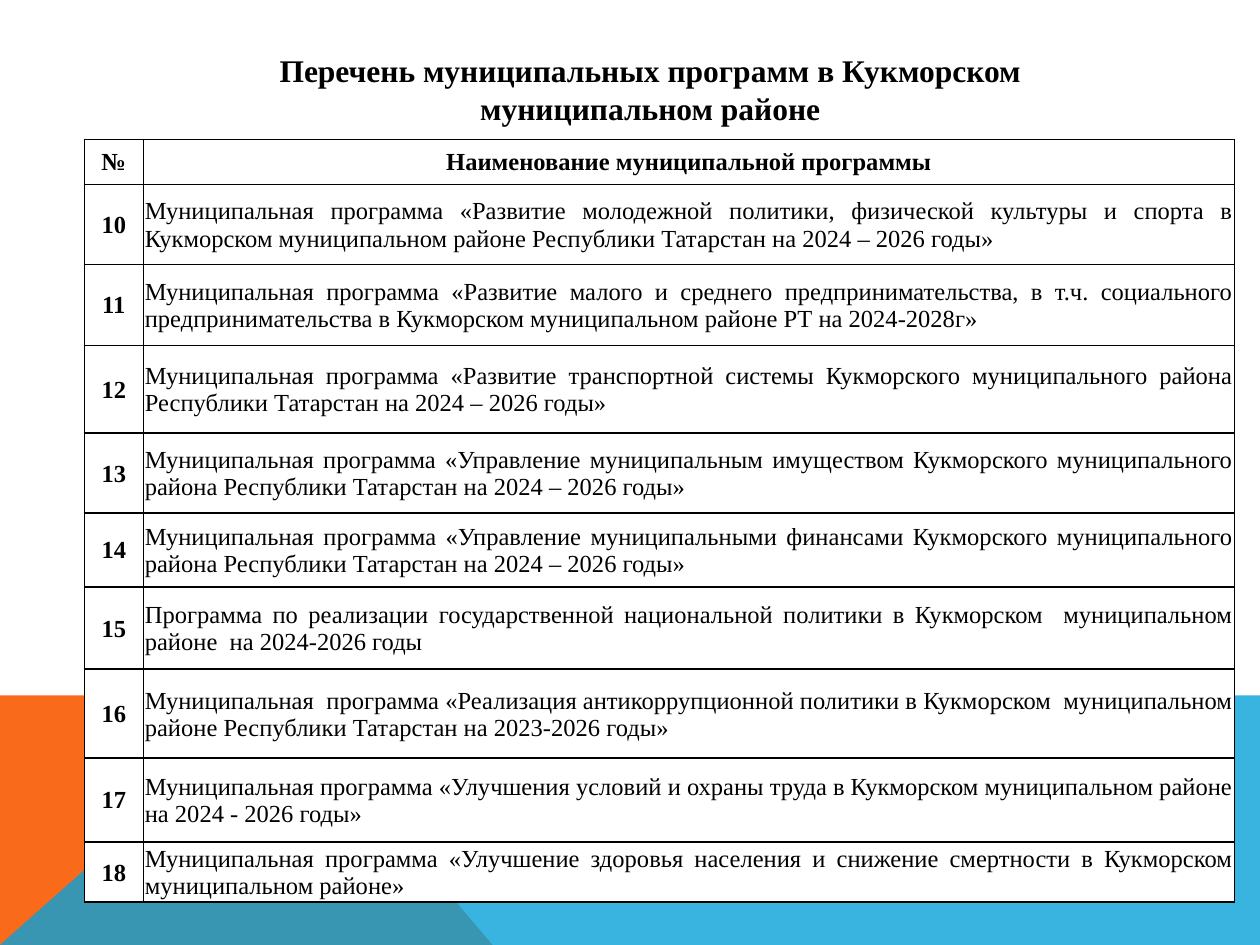
"""Build a slide listing the municipal programmes of the Kukmor district."""

from typing import NamedTuple

from lxml.etree import SubElement
from pptx import Presentation
from pptx.dml.color import RGBColor
from pptx.enum.text import MSO_ANCHOR, MSO_AUTO_SIZE, PP_ALIGN
from pptx.oxml.ns import qn
from pptx.util import Cm, Pt

FONT = "Times New Roman"
BLACK = "000000"
WHITE = "FFFFFF"
COLUMN_WIDTHS = (1.19, 22)


class Band(NamedTuple):
    points: list[tuple[float, float]]
    color: str
    opacity: int


class Row(NamedTuple):
    number: str
    name: str
    height: float


BANDS = [
    Band([(0, 19.05), (0, 14.02), (5.66, 14.02), (9.93, 19.05)], "F96A1B", 100),
    Band([(0, 19.05), (5.66, 14.02), (25.4, 14.02), (25.4, 19.05)], "08A1D9", 80),
]

ROWS = [
    Row("№", "Наименование муниципальной программы", 0.91),
    Row("10", "Муниципальная программа «Развитие молодежной политики, физической культуры и спорта "
        "в Кукморском муниципальном районе Республики Татарстан на 2024 – 2026 годы»", 1.61),
    Row("11", "Муниципальная программа «Развитие малого и среднего предпринимательства, в т.ч. социального "
        "предпринимательства в Кукморском муниципальном районе РТ на 2024-2028г»", 1.63),
    Row("12", "Муниципальная программа «Развитие транспортной системы Кукморского муниципального района "
        "Республики Татарстан на 2024 – 2026 годы»", 1.77),
    Row("13", "Муниципальная программа «Управление муниципальным имуществом Кукморского муниципального "
        "района Республики Татарстан на 2024 – 2026 годы»", 1.61),
    Row("14", "Муниципальная программа «Управление муниципальными финансами Кукморского муниципального "
        "района Республики Татарстан на 2024 – 2026 годы»", 1.49),
    Row("15", "Программа по реализации государственной национальной политики в Кукморском  муниципальном "
        "районе  на 2024-2026 годы", 1.66),
    Row("16", "Муниципальная  программа «Реализация антикоррупционной политики в Кукморском  муниципальном "
        "районе Республики Татарстан на 2023-2026 годы»", 1.79),
    Row("17", "Муниципальная программа «Улучшения условий и охраны труда в Кукморском муниципальном районе "
        "на 2024 - 2026 годы»", 1.69),
    Row("18", "Муниципальная программа «Улучшение здоровья населения и снижение смертности в Кукморском "
        "муниципальном районе»", 1.21),
]


def paint(fill, color: str) -> None:
    fill.solid()
    fill.fore_color.rgb = RGBColor.from_string(color)


def write(frame, text: str, size: int, bold: bool, align: PP_ALIGN) -> None:
    frame.text = text
    para = frame.paragraphs[0]
    para.alignment = align
    for span in para.runs:
        span.font.name = FONT
        span.font.size = Pt(size)
        span.font.bold = bold
        paint(span.font.fill, BLACK)


def draw_band(page, band: Band) -> None:
    points = [(Cm(x), Cm(y)) for x, y in band.points]
    builder = page.shapes.build_freeform(*points[0])
    builder.add_line_segments(points[1:], close=True)
    shape = builder.convert_to_shape()
    shape.shadow.inherit = False
    shape.line.fill.background()
    paint(shape.fill, band.color)
    if band.opacity < 100:
        color = shape.fill._xPr.find(".//" + qn("a:srgbClr"))
        SubElement(color, qn("a:alpha"), val=str(band.opacity * 1000))


def add_borders(cell) -> None:
    properties = cell._tc.get_or_add_tcPr()
    for side in ("lnL", "lnR", "lnT", "lnB"):
        line = SubElement(properties, qn(f"a:{side}"), w=str(Pt(1)))
        fill = SubElement(line, qn("a:solidFill"))
        SubElement(fill, qn("a:srgbClr"), val=BLACK)


def fill_cell(cell, text: str, bold: bool, align: PP_ALIGN) -> None:
    cell.margin_left = cell.margin_right = cell.margin_top = Cm(0.03)
    cell.margin_bottom = 0
    cell.vertical_anchor = MSO_ANCHOR.MIDDLE
    write(cell.text_frame, text, 14, bold, align)
    add_borders(cell)
    paint(cell.fill, WHITE)


def draw_table(page, rows: list[Row]) -> None:
    height = sum(row.height for row in rows)
    frame = page.shapes.add_table(len(rows), len(COLUMN_WIDTHS), Cm(1.7), Cm(2.81),
                                  Cm(sum(COLUMN_WIDTHS)), Cm(height))
    table = frame.table
    table.horz_banding = False
    for column, width in zip(table.columns, COLUMN_WIDTHS):
        column.width = Cm(width)
    for index, row in enumerate(rows):
        table.rows[index].height = Cm(row.height)
        header = index == 0
        fill_cell(table.cell(index, 0), row.number, True, PP_ALIGN.CENTER)
        fill_cell(table.cell(index, 1), row.name, header,
                  PP_ALIGN.CENTER if header else PP_ALIGN.JUSTIFY)


def place_title(page, text: str) -> None:
    title = page.shapes.title
    title.left, title.top, title.width, title.height = Cm(5.31), Cm(0.91), Cm(15.6), Cm(1.8)
    frame = title.text_frame
    frame.word_wrap = True
    frame.auto_size = MSO_AUTO_SIZE.SHAPE_TO_FIT_TEXT
    frame.vertical_anchor = MSO_ANCHOR.TOP
    write(frame, text, 18, True, PP_ALIGN.CENTER)


def main() -> None:
    deck = Presentation()
    deck.slide_width, deck.slide_height = Cm(25.4), Cm(19.05)
    page = deck.slides.add_slide(deck.slide_layouts[5])
    paint(page.background.fill, WHITE)
    for band in BANDS:
        draw_band(page, band)
    draw_table(page, ROWS)
    place_title(page, "Перечень муниципальных программ в Кукморском муниципальном районе")
    deck.save("out.pptx")


if __name__ == "__main__":
    main()
